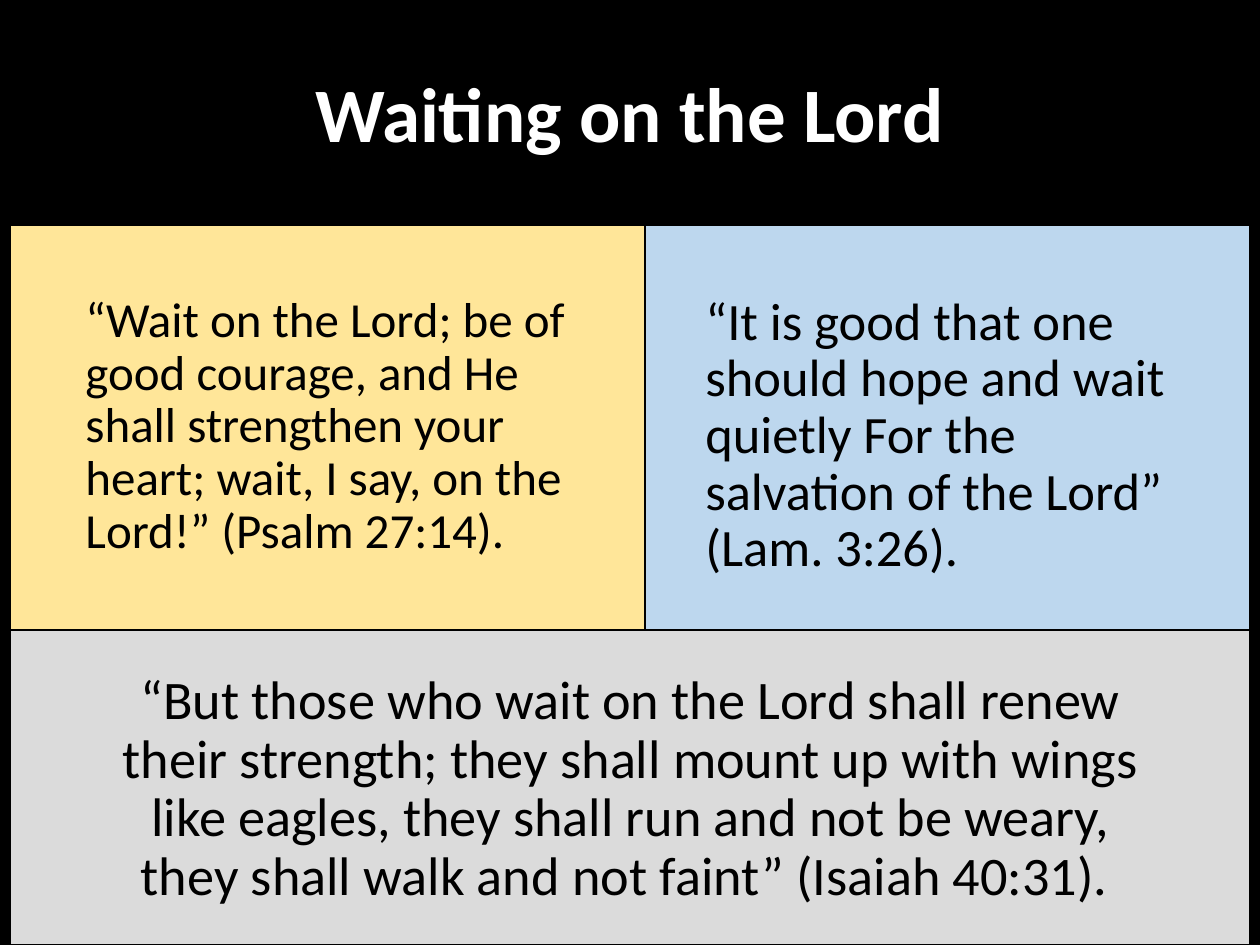
from pptx import Presentation
from pptx.dml.color import RGBColor
from pptx.enum.shapes import MSO_SHAPE
from pptx.enum.text import MSO_ANCHOR, PP_ALIGN
from pptx.util import Inches, Pt

RECTANGLE = MSO_SHAPE.RECTANGLE
MIDDLE = MSO_ANCHOR.MIDDLE
TOP = MSO_ANCHOR.TOP
LEFT = PP_ALIGN.LEFT
CENTER = PP_ALIGN.CENTER

FONT = "Calibri"
BLACK = "000000"
WHITE = "FFFFFF"
TITLE_ONLY = 5

PANEL_LEFT, PANEL_MIDDLE, PANEL_RIGHT = 0.08, 5.12, 9.92
PANEL_TOP, PANEL_SPLIT, PANEL_BOTTOM = 1.79, 5, 7.5

PSALM = (
    "“Wait on the Lord; be of good courage, and He shall strengthen your "
    "heart; wait, I say, on the Lord!” (Psalm 27:14)."
)
LAMENTATIONS = (
    "“It is good that one should hope and wait quietly For the \v"
    "salvation of the Lord” (Lam. 3:26)."
)
ISAIAH = (
    "“But those who wait on the Lord shall renew their strength; they shall "
    "mount up with wings like eagles, they shall run and not be weary, they "
    "shall walk and not faint” (Isaiah 40:31). "
)


def color(hex_value):
    """Turn a hex string into a colour."""
    return RGBColor.from_string(hex_value)


def write_text(holder, text, size, hex_value, align, anchor, bold=False):
    """Fill a text holder with one formatted paragraph."""
    frame = holder.text_frame
    frame.word_wrap = True
    frame.vertical_anchor = anchor
    frame.text = text
    paragraph = frame.paragraphs[0]
    paragraph.alignment = align
    paragraph.line_spacing = 0.9
    font = paragraph.font
    font.name = FONT
    font.size = Pt(size)
    font.bold = bold
    font.color.rgb = color(hex_value)


def add_title(slide, text):
    """Place and format the title placeholder."""
    title = slide.shapes.title
    title.left, title.top = Inches(0.69), Inches(0.4)
    title.width, title.height = Inches(8.62), Inches(1.06)
    write_text(title, text, 44, WHITE, CENTER, MIDDLE, bold=True)


def add_panel(slide, left, top, right, bottom, fill):
    """Draw a coloured panel between the given edges."""
    panel = slide.shapes.add_shape(
        RECTANGLE, Inches(left), Inches(top), Inches(right - left), Inches(bottom - top)
    )
    panel.shadow.inherit = False
    panel.fill.solid()
    panel.fill.fore_color.rgb = color(fill)
    panel.line.color.rgb = color(BLACK)
    panel.line.width = Pt(1)


def add_verse(slide, box, text, size, align=LEFT):
    """Add a Bible verse in a text box."""
    verse = slide.shapes.add_textbox(*map(Inches, box))
    write_text(verse, text, size, BLACK, align, TOP)


def main():
    """Build and save the slide."""
    deck = Presentation()
    deck.slide_width, deck.slide_height = Inches(10), Inches(7.5)
    slide = deck.slides.add_slide(deck.slide_layouts[TITLE_ONLY])
    slide.background.fill.solid()
    slide.background.fill.fore_color.rgb = color(BLACK)

    add_title(slide, "Waiting on the Lord")
    add_panel(slide, PANEL_MIDDLE, PANEL_TOP, PANEL_RIGHT, PANEL_SPLIT, "BDD7EE")
    add_panel(slide, PANEL_LEFT, PANEL_SPLIT, PANEL_RIGHT, PANEL_BOTTOM, "DBDBDB")
    add_verse(slide, (0.69, 5.29, 8.62, 1.85), ISAIAH, 31, CENTER)
    add_panel(slide, PANEL_LEFT, PANEL_TOP, PANEL_MIDDLE, PANEL_SPLIT, "FFE699")
    add_verse(slide, (0.58, 2.29, 4.01, 2.46), PSALM, 28)
    add_verse(slide, (5.5, 2.29, 4.33, 2.32), LAMENTATIONS, 30)
    deck.save("out.pptx")


if __name__ == "__main__":
    main()
